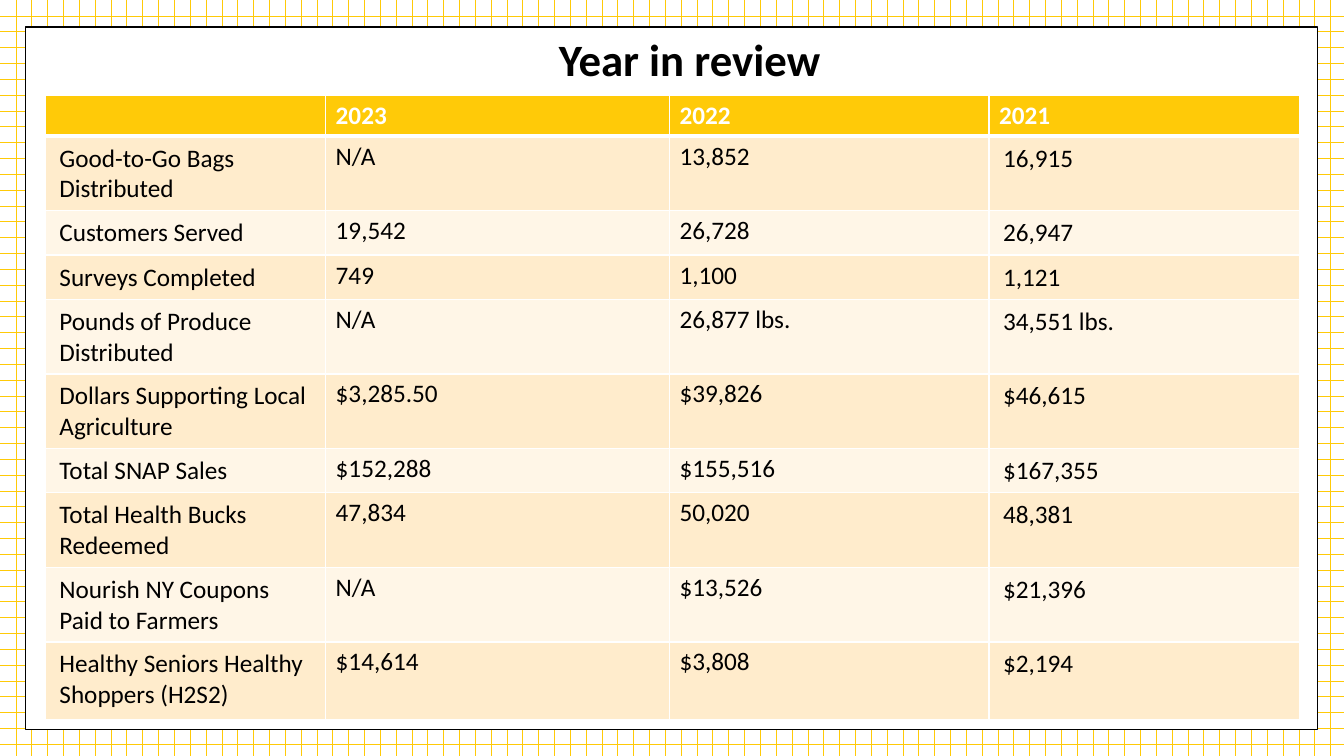
import pptx
import pptx.util
import pptx.dml.color
import pptx.enum.dml
import pptx.enum.shapes
import pptx.enum.text
import pptx.oxml.ns
import lxml.etree

Inches, Pt = pptx.util.Inches, pptx.util.Pt

# Content
TITLE = "Year in review"
ROWS = [
    ("", "2023", "2022", "2021"),
    ("Good-to-Go Bags Distributed", "N/A", "13,852", "16,915"),
    ("Customers Served", "19,542", "26,728", "26,947"),
    ("Surveys Completed", "749", "1,100", "1,121"),
    ("Pounds of Produce Distributed", "N/A", "26,877 lbs.", "34,551 lbs."),
    ("Dollars Supporting Local Agriculture", "$3,285.50", "$39,826", "$46,615"),
    ("Total SNAP Sales", "$152,288", "$155,516", "$167,355"),
    ("Total Health Bucks Redeemed", "47,834", "50,020", "48,381"),
    ("Nourish NY Coupons Paid to Farmers", "N/A", "$13,526", "$21,396"),
    ("Healthy Seniors Healthy Shoppers (H2S2)", "$14,614", "$3,808", "$2,194"),
]
COLUMN_WIDTHS = (2.78, 3.41, 3.17, 3.08)
ROW_HEIGHTS = (0.38, 0.7, 0.42, 0.42, 0.7, 0.7, 0.42, 0.7, 0.7, 0.77)

THEME = {
    "font": "Calibri", "title_size": 32, "table_size": 18,
    "black": "000000", "white": "FFFFFF", "gold": "FFCA08",
    "bands": ("FFF6E7", "FFECCC"),
}


def color(value):
    return pptx.dml.color.RGBColor.from_string(value)


def set_font(para, size, value, bold):
    para.font.name = THEME["font"]
    para.font.size = Pt(size)
    para.font.bold = bold
    para.font.color.rgb = color(value)


def set_borders(cell, widths):
    """Add white cell borders; widths are points for left, right, top, bottom."""
    properties = cell._tc.get_or_add_tcPr()
    qn = pptx.oxml.ns.qn
    for side, width in zip("LRTB", widths):
        line = lxml.etree.SubElement(properties, qn(f"a:ln{side}"), w=str(Pt(width)))
        fill = lxml.etree.SubElement(line, qn("a:solidFill"))
        lxml.etree.SubElement(fill, qn("a:srgbClr"), val=THEME["white"])


def add_background(page):
    fill = page.background.fill
    fill.patterned()
    fill.pattern = pptx.enum.dml.MSO_PATTERN.DOTTED_GRID
    fill.fore_color.rgb = color(THEME["gold"])
    fill.back_color.rgb = color(THEME["white"])

    panel = page.shapes.add_shape(
        pptx.enum.shapes.MSO_SHAPE.RECTANGLE,
        Inches(0.25), Inches(0.27), Inches(12.82), Inches(6.97))
    panel.shadow.inherit = False
    panel.fill.solid()
    panel.fill.fore_color.rgb = color(THEME["white"])
    panel.line.color.rgb = color(THEME["black"])
    panel.line.width = Pt(1)


def add_title(page):
    box = page.shapes.add_textbox(Inches(0.8), Inches(0.4), Inches(12.08), Inches(0.44))
    frame = box.text_frame
    frame.word_wrap = True
    frame.vertical_anchor = pptx.enum.text.MSO_ANCHOR.MIDDLE
    para = frame.paragraphs[0]
    para.text = TITLE
    para.alignment = pptx.enum.text.PP_ALIGN.CENTER
    para.line_spacing = 0.9
    set_font(para, THEME["title_size"], THEME["black"], True)


def add_review_table(page):
    table = page.shapes.add_table(
        len(ROWS), len(COLUMN_WIDTHS), Inches(0.45), Inches(0.95),
        Inches(sum(COLUMN_WIDTHS)), Inches(sum(ROW_HEIGHTS))).table
    for column, width in zip(table.columns, COLUMN_WIDTHS):
        column.width = Inches(width)
    for row, height in zip(table.rows, ROW_HEIGHTS):
        row.height = Inches(height)

    last = len(COLUMN_WIDTHS) - 1
    for r, values in enumerate(ROWS):
        header = r == 0
        for c, value in enumerate(values):
            cell = table.cell(r, c)
            # The header's lower edge is the only thick rule
            set_borders(cell, (1, 1, 3 if r == 1 else 1, 3 if header else 1))
            cell.fill.solid()
            cell.fill.fore_color.rgb = color(THEME["gold"] if header else THEME["bands"][r % 2])
            if not header and c in (0, last):
                cell.margin_left = cell.margin_right = Inches(0.14)
                cell.margin_top = cell.margin_bottom = Inches(0.07)
            para = cell.text_frame.paragraphs[0]
            para.text = value
            set_font(para, THEME["table_size"], THEME["white" if header else "black"], header)


def main():
    deck = pptx.Presentation()
    deck.slide_width, deck.slide_height = Inches(13.33), Inches(7.5)
    page = deck.slides.add_slide(deck.slide_layouts[6])
    add_background(page)
    add_title(page)
    add_review_table(page)
    deck.save("out.pptx")


if __name__ == "__main__":
    main()
